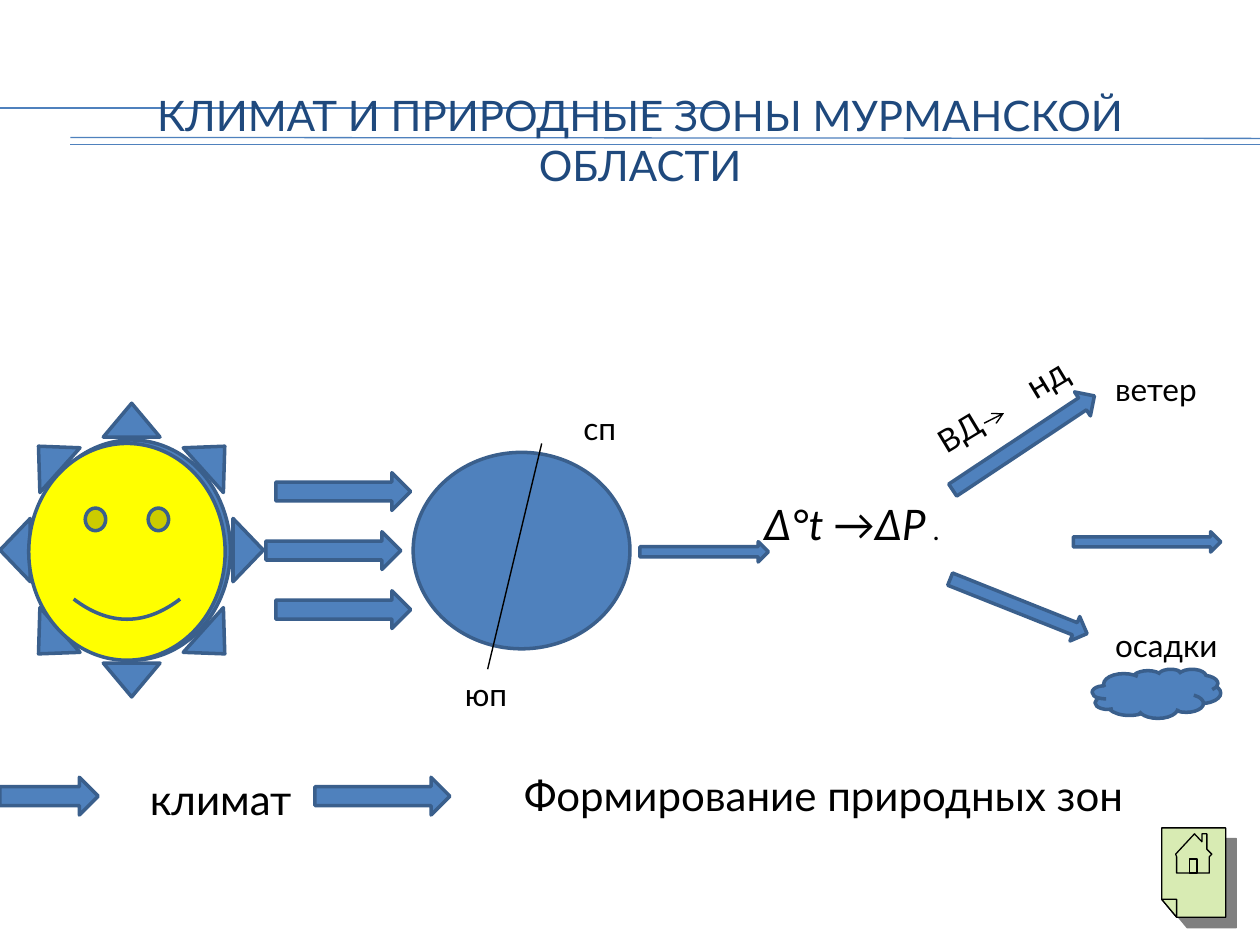
from dataclasses import dataclass

from lxml.etree import SubElement
from pptx import Presentation
from pptx.dml.color import RGBColor
from pptx.enum.shapes import MSO_CONNECTOR, MSO_SHAPE
from pptx.enum.text import MSO_ANCHOR, PP_ALIGN
from pptx.oxml.ns import qn
from pptx.util import Cm, Pt

BLUE = RGBColor(0x4F, 0x81, 0xBD)
OUTLINE = RGBColor(0x3A, 0x5F, 0x8C)
NAVY = RGBColor(0x1F, 0x49, 0x7D)
YELLOW = RGBColor(0xFF, 0xFF, 0x00)
GREEN = RGBColor(0xD8, 0xEB, 0xB3)
BLACK = RGBColor(0x00, 0x00, 0x00)
FONT = "Lato"


@dataclass
class Figure:
    kind: MSO_SHAPE
    left: float
    top: float
    width: float
    height: float
    rotation: float = 0
    fill: RGBColor = BLUE


@dataclass
class Label:
    text: str
    left: float
    top: float
    width: float
    height: float
    size: float = 18
    rotation: float = 0


@dataclass
class Line:
    x1: float
    y1: float
    x2: float
    y2: float
    color: RGBColor = BLACK
    width: float = 0.79
    arrow: bool = False


ARROW = MSO_SHAPE.RIGHT_ARROW
RULES = [
    Line(1.42, 2.92, 25.4, 2.92, BLUE, 0.75),
    Line(0, 2.18, 14.66, 2.18, BLUE, 0.75),
    Line(1.42, 2.77, 25.4, 2.79, BLUE, 0.75),
]
FIGURES = [
    Figure(MSO_SHAPE.SUN, 0, 8.13, 5.31, 5.92),
    Figure(MSO_SHAPE.SMILEY_FACE, 0.58, 8.94, 3.96, 4.37, fill=YELLOW),
    Figure(ARROW, 5.56, 9.53, 2.72, 0.76),
    Figure(ARROW, 5.36, 10.72, 2.72, 0.76),
    Figure(ARROW, 5.56, 11.91, 2.72, 0.76),
    Figure(MSO_SHAPE.OVAL, 8.33, 9.12, 4.37, 3.96),
    Figure(ARROW, 12.9, 10.92, 2.59, 0.41),
    Figure(ARROW, 18.92, 8.64, 3.43, 0.58, 326.4),
    Figure(ARROW, 19.05, 11.96, 2.97, 0.53, 21.7),
    Figure(ARROW, 21.64, 10.72, 2.97, 0.41),
    Figure(MSO_SHAPE.CLOUD, 22.02, 13.49, 2.59, 0.99),
    Figure(ARROW, 0, 15.67, 1.98, 0.76),
    Figure(ARROW, 6.35, 15.67, 2.72, 0.76),
]
LABELS = [
    Label("сп", 11.51, 8.13, 2.77, 1.8),
    Label("юп", 9.12, 13.49, 1.4, 1.02),
    Label("ветер", 22.23, 7.34, 2.18, 1.02),
    Label("осадки", 22.23, 12.5, 2.59, 1.02),
    Label("климат", 2.77, 15.47, 3.38, 1.27, 24),
    Label("Формирование природных зон", 10.31, 15.39, 13.03, 1.27, 24),
]
TITLE = Label("КЛИМАТ И ПРИРОДНЫЕ ЗОНЫ МУРМАНСКОЙ ОБЛАСТИ", 0.84, 1.27, 24.13, 3.1, 24)
FORMULA = Label("Δ°t →ΔР", 15.09, 9.93, 4.17, 1.96, 24)
PRESSURE = Label("ВД", 18.47, 7.57, 3.58, 1.12, 18, 328.9)
EARTH_AXIS = Line(9.83, 13.49, 10.92, 8.94)
PRESSURE_ARROW = Line(19.84, 8.53, 20.24, 8.33, arrow=True)

PAGE = [(23.72, 18.49), (23.42, 18.13), (23.42, 16.69), (24.71, 16.69), (24.71, 18.49)]
FOLD = [(23.42, 18.13), (23.72, 18.13), (23.72, 18.49)]
HOUSE = [
    (23.72, 17.27), (23.72, 17.6), (24.38, 17.6), (24.38, 17.27),
    (24.43, 17.22), (24.33, 17.12), (24.33, 16.81), (24.23, 16.81),
    (24.23, 16.97), (24.08, 16.81), (23.7, 17.22),
]
DOOR = [(23.98, 17.6), (23.98, 17.32), (24.13, 17.32), (24.13, 17.6)]


def paint(s, fill: RGBColor, line: RGBColor, width: float):
    s.shadow.inherit = False
    s.fill.solid()
    s.fill.fore_color.rgb = fill
    s.line.color.rgb = line
    s.line.width = Pt(width)


def add_figure(shapes, figure: Figure):
    s = shapes.add_shape(figure.kind, Cm(figure.left), Cm(figure.top),
                         Cm(figure.width), Cm(figure.height))
    s.rotation = figure.rotation
    paint(s, figure.fill, OUTLINE, 2)
    return s


def add_line(shapes, line: Line):
    s = shapes.add_connector(MSO_CONNECTOR.STRAIGHT, Cm(line.x1), Cm(line.y1),
                             Cm(line.x2), Cm(line.y2))
    s.line.color.rgb = line.color
    s.line.width = Pt(line.width)
    if line.arrow:
        SubElement(s.line._get_or_add_ln(), qn("a:tailEnd"), type="arrow")
    SubElement(s._element.spPr, qn("a:effectLst"))


def style_run(r, size: float, color: RGBColor = BLACK):
    r.font.name = FONT
    r.font.size = Pt(size)
    r.font.color.rgb = color


def add_label(shapes, label: Label, color: RGBColor = BLACK, centered: bool = False):
    s = shapes.add_textbox(Cm(label.left), Cm(label.top), Cm(label.width), Cm(label.height))
    s.rotation = label.rotation
    tf = s.text_frame
    tf.word_wrap = True
    tf.text = label.text
    p = tf.paragraphs[0]
    if centered:
        p.alignment = PP_ALIGN.CENTER
    else:
        tf.margin_right = 0
    style_run(p.runs[0], label.size, color)
    return tf


def add_title(shapes):
    tf = add_label(shapes, TITLE, NAVY, centered=True)
    tf.vertical_anchor = MSO_ANCHOR.MIDDLE
    tf.margin_left = tf.margin_right = Cm(0.5)


def add_formula(shapes):
    p = add_label(shapes, FORMULA, centered=True).paragraphs[0]
    p.runs[0].font.italic = True
    r = p.add_run()
    r.text = " ."
    style_run(r, 16)


def add_pressure(shapes):
    p = add_label(shapes, PRESSURE).paragraphs[0]
    tabs = SubElement(p._p.get_or_add_pPr(), qn("a:tabLst"))
    SubElement(tabs, qn("a:tab"), pos=str(Cm(2.1)), algn="l")
    r = p.add_run()
    r.text = "\tнд"
    style_run(r, 20)


def add_outline(shapes, points: list[tuple[float, float]]):
    start, *rest = [(Cm(x), Cm(y)) for x, y in points]
    builder = shapes.build_freeform(*start, scale=1.0)
    builder.add_line_segments(rest, close=True)
    s = builder.convert_to_shape()
    paint(s, GREEN, BLACK, 0.75)
    return s


def add_home_page(shapes):
    page = add_outline(shapes, PAGE)
    effects = page._element.spPr.find(qn("a:effectLst"))
    shadow = SubElement(effects, qn("a:outerShdw"), dist=str(Pt(8.5)), dir="2700000")
    SubElement(shadow, qn("a:srgbClr"), val="808080")
    for points in (FOLD, HOUSE, DOOR):
        add_outline(shapes, points)


def main():
    prs = Presentation()
    prs.slide_width, prs.slide_height = Cm(25.4), Cm(19.05)
    shapes = prs.slides.add_slide(prs.slide_layouts[6]).shapes
    for rule in RULES:
        add_line(shapes, rule)
    add_title(shapes)
    sun, *_ = [add_figure(shapes, figure) for figure in FIGURES]
    sun.adjustments[0] = 0.125
    for label in LABELS:
        add_label(shapes, label)
    add_formula(shapes)
    add_pressure(shapes)
    for line in (EARTH_AXIS, PRESSURE_ARROW):
        add_line(shapes, line)
    add_home_page(shapes)
    prs.save("out.pptx")


if __name__ == "__main__":
    main()
